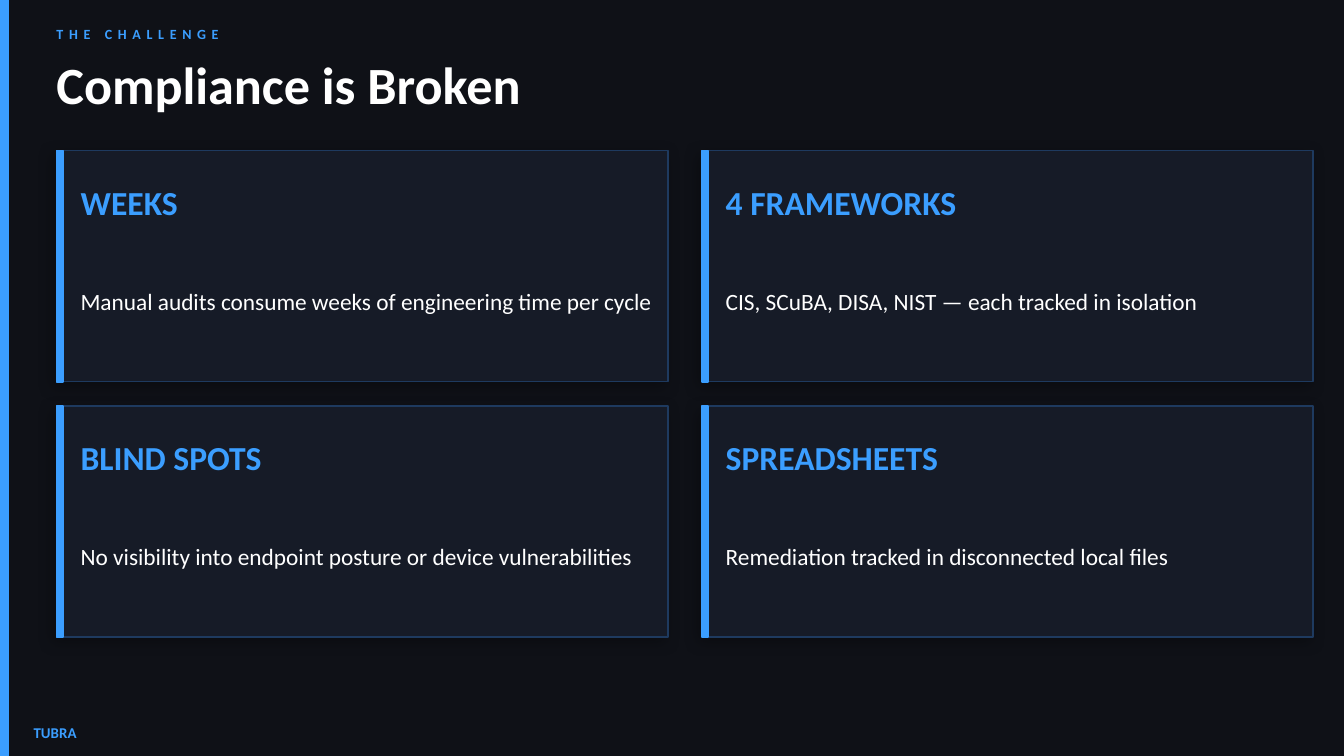
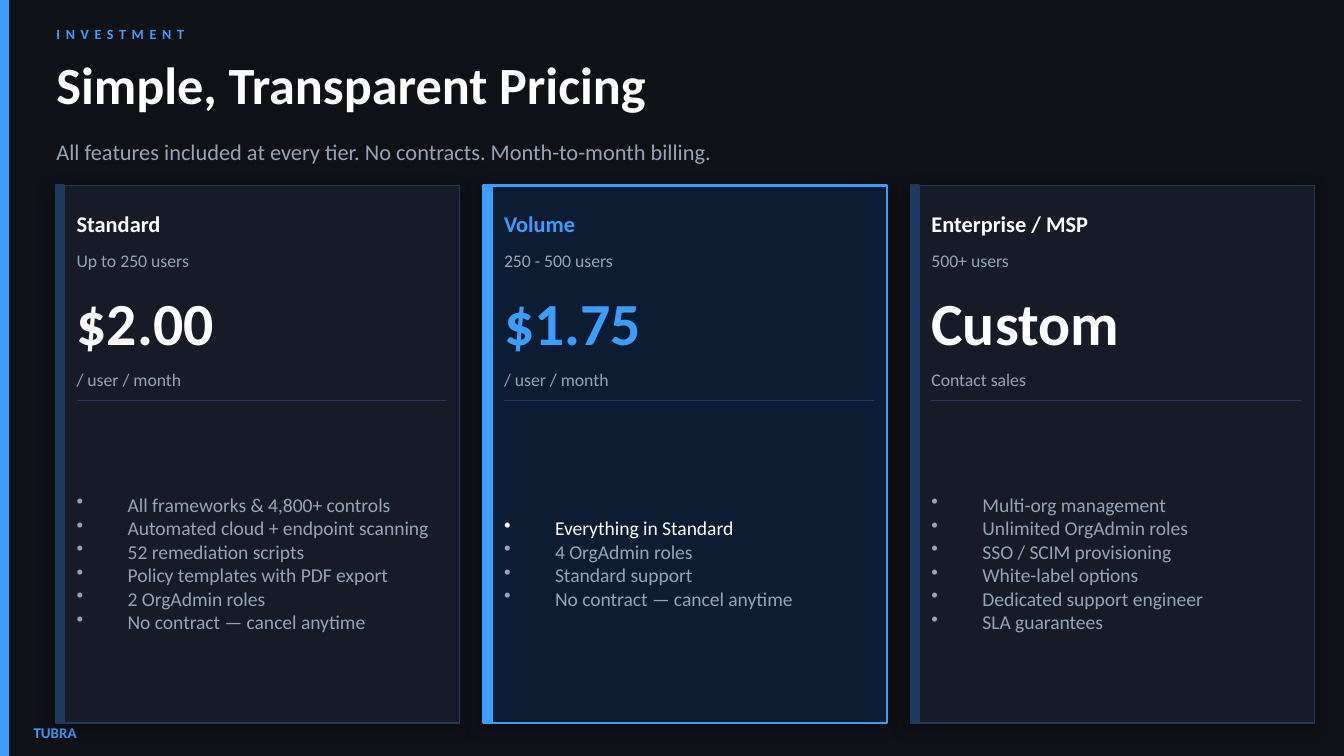
"""Build the challenge and pricing slides of a compliance deck."""
import pptx
import pptx.dml.color
import pptx.enum.shapes
import pptx.enum.text
import pptx.oxml.ns
import pptx.util
from lxml import etree

Pt = pptx.util.Pt

BRAND = "TUBRA"
CHALLENGE = {
    "kicker": "THE CHALLENGE",
    "title": "Compliance is Broken",
    "problems": [
        ("WEEKS", "Manual audits consume weeks of engineering time per cycle"),
        ("4 FRAMEWORKS", "CIS, SCuBA, DISA, NIST — each tracked in isolation"),
        ("BLIND SPOTS", "No visibility into endpoint posture or device vulnerabilities"),
        ("SPREADSHEETS", "Remediation tracked in disconnected local files"),
    ],
}
PRICING = {
    "kicker": "INVESTMENT",
    "title": "Simple, Transparent Pricing",
    "promise": "All features included at every tier. No contracts. Month-to-month billing.",
    "tiers": [
        {"name": "Standard", "users": "Up to 250 users", "price": "$2.00",
         "unit": "/ user / month", "look": "plain", "lead": [],
         "features": ["All frameworks & 4,800+ controls",
                      "Automated cloud + endpoint scanning",
                      "52 remediation scripts", "Policy templates with PDF export",
                      "2 OrgAdmin roles", "No contract — cancel anytime"]},
        {"name": "Volume", "users": "250 - 500 users", "price": "$1.75",
         "unit": "/ user / month", "look": "featured", "lead": ["Everything in Standard"],
         "features": ["4 OrgAdmin roles", "Standard support",
                      "No contract — cancel anytime"]},
        {"name": "Enterprise / MSP", "users": "500+ users", "price": "Custom",
         "unit": "Contact sales", "look": "plain", "lead": [],
         "features": ["Multi-org management", "Unlimited OrgAdmin roles",
                      "SSO / SCIM provisioning", "White-label options",
                      "Dedicated support engineer", "SLA guarantees"]},
    ],
}

COLORS = {"night": "0F1117", "panel": "161B27", "navy": "0C1C33", "edge": "1E3A5F",
          "blue": "3B9EFF", "white": "FFFFFF", "slate": "94A3B8", "black": "000000"}
LOOKS = {
    "plain": {"fill": "panel", "edge": "edge", "edge_width": 0.75,
              "band": "edge", "accent": "white"},
    "featured": {"fill": "navy", "edge": "blue", "edge_width": 1.5,
                 "band": "blue", "accent": "blue"},
}
FONTS = {
    "brand": {"size": Pt(8), "bold": True},
    "kicker": {"size": Pt(7.5), "bold": True},
    "title": {"size": Pt(28), "bold": True},
    "promise": {"size": Pt(12), "bold": False},
    "problem": {"size": Pt(18), "bold": True},
    "detail": {"size": Pt(12.5), "bold": False},
    "name": {"size": Pt(12), "bold": True},
    "price": {"size": Pt(32), "bold": True},
    "small": {"size": Pt(9.5), "bold": False},
    "feature": {"size": Pt(10.5), "bold": False},
}
FRAME = {"word_wrap": True, "margin_left": 0, "margin_right": 0, "margin_top": 0,
         "margin_bottom": 0, "vertical_anchor": pptx.enum.text.MSO_ANCHOR.MIDDLE}
WIDTH, HEIGHT = 720, 405
LEFT = 30.24
BULLET_INDENT = Pt(27.36)


def rgb(color):
    return pptx.dml.color.RGBColor.from_string(COLORS[color])


def apply(target, formats):
    for key, value in formats.items():
        setattr(target, key, value)


def add_xml(parent, tag, **attributes):
    values = {key: str(value) for key, value in attributes.items()}
    return etree.SubElement(parent, pptx.oxml.ns.qn(tag), values)


def write(slide, box, lines, font, color, spacing=None, bulleted=False):
    """Put lines of text, or (text, colour) pairs, into a box."""
    frame = slide.shapes.add_textbox(*map(Pt, box)).text_frame
    apply(frame, FRAME)
    pairs = [(lines, color)] if isinstance(lines, str) else lines
    for index, (text, tint) in enumerate(pairs):
        paragraph = frame.paragraphs[0] if index == 0 else frame.add_paragraph()
        if bulleted:
            properties = paragraph._p.get_or_add_pPr()
            properties.set("marL", str(BULLET_INDENT))
            properties.set("indent", str(-BULLET_INDENT))
            add_xml(properties, "a:buChar", char="•")
        run = paragraph.add_run()
        run.text = text
        apply(run.font, {"name": "Calibri", **FONTS[font]})
        run.font.color.rgb = rgb(tint)
        if spacing:
            run._r.get_or_add_rPr().set("spc", str(spacing))


def add_block(slide, box, fill, edge, edge_width=1):
    block = slide.shapes.add_shape(pptx.enum.shapes.MSO_SHAPE.RECTANGLE, *map(Pt, box))
    block.shadow.inherit = False
    block.fill.solid()
    block.fill.fore_color.rgb = rgb(fill)
    block.line.color.rgb = rgb(edge)
    block.line.width = Pt(edge_width)
    return block


def add_card(slide, box, look, band_color, band_width):
    card = add_block(slide, box, look["fill"], look["edge"], look["edge_width"])
    effects = card._element.spPr.find(pptx.oxml.ns.qn("a:effectLst"))
    shadow = add_xml(effects, "a:outerShdw", blurRad=Pt(8), dist=Pt(3),
                     dir=135 * 60000, algn="bl", rotWithShape=0)
    tint = add_xml(shadow, "a:srgbClr", val=COLORS["black"])
    add_xml(tint, "a:alpha", val=30000)
    x, y, _, height = box
    add_block(slide, (x, y, band_width, height), band_color, band_color)


def add_divider(slide, x, y, width):
    divider = slide.shapes.add_connector(
        pptx.enum.shapes.MSO_CONNECTOR.STRAIGHT, Pt(x), Pt(y), Pt(x + width), Pt(y))
    divider.line.color.rgb = rgb("edge")
    divider.line.width = Pt(0.75)
    add_xml(divider._element.spPr, "a:effectLst")


def start_slide(deck, content):
    slide = deck.slides.add_slide(deck.slide_layouts[6])
    slide.background.fill.solid()
    slide.background.fill.fore_color.rgb = rgb("night")
    add_block(slide, (0, 0, 4.32, HEIGHT), "blue", "blue")
    write(slide, (18, 384.48, 72, 15.84), BRAND, "brand", "blue")
    write(slide, (LEFT, 10.08, 432, 15.84), content["kicker"], "kicker", "blue", spacing=300)
    write(slide, (LEFT, 23.04, 676.8, 43.2), content["title"], "title", "white")
    return slide


def build_challenge(deck):
    slide = start_slide(deck, CHALLENGE)
    for index, (problem, detail) in enumerate(CHALLENGE["problems"]):
        row, column = divmod(index, 2)
        x, y = LEFT + column * 345.6, 80.64 + row * 136.8
        add_card(slide, (x, y, 327.6, 123.84), LOOKS["plain"], "blue", 3.6)
        write(slide, (x + 12.96, y + 8.64, 309.6, 37.44), problem, "problem", "blue")
        write(slide, (x + 12.96, y + 48.96, 307.44, 63.36), detail, "detail", "white")


def build_pricing(deck):
    slide = start_slide(deck, PRICING)
    write(slide, (LEFT, 70.56, 648, 21.6), PRICING["promise"], "promise", "slate")
    top = 99.36
    for column, tier in enumerate(PRICING["tiers"]):
        look = LOOKS[tier["look"]]
        x = LEFT + column * 228.96
        text_x = x + 10.8
        add_card(slide, (x, top, 216, 288), look, look["band"], 4.32)
        for part, offset, height, font, color in (
                ("name", 8.64, 23.04, "name", look["accent"]),
                ("users", 31.68, 17.28, "small", "slate"),
                ("price", 50.4, 44.64, "price", look["accent"]),
                ("unit", 95.04, 17.28, "small", "slate")):
            write(slide, (text_x, top + offset, 200.16, height), tier[part], font, color)
        add_divider(slide, text_x, top + 115.2, 198)
        features = ([(text, "white") for text in tier["lead"]]
                    + [(text, "slate") for text in tier["features"]])
        write(slide, (text_x, top + 123.84, 200.16, 156.96), features,
              "feature", "slate", bulleted=True)


def main():
    deck = pptx.Presentation()
    apply(deck, {"slide_width": Pt(WIDTH), "slide_height": Pt(HEIGHT)})
    build_challenge(deck)
    build_pricing(deck)
    deck.save("out.pptx")


if __name__ == "__main__":
    main()
